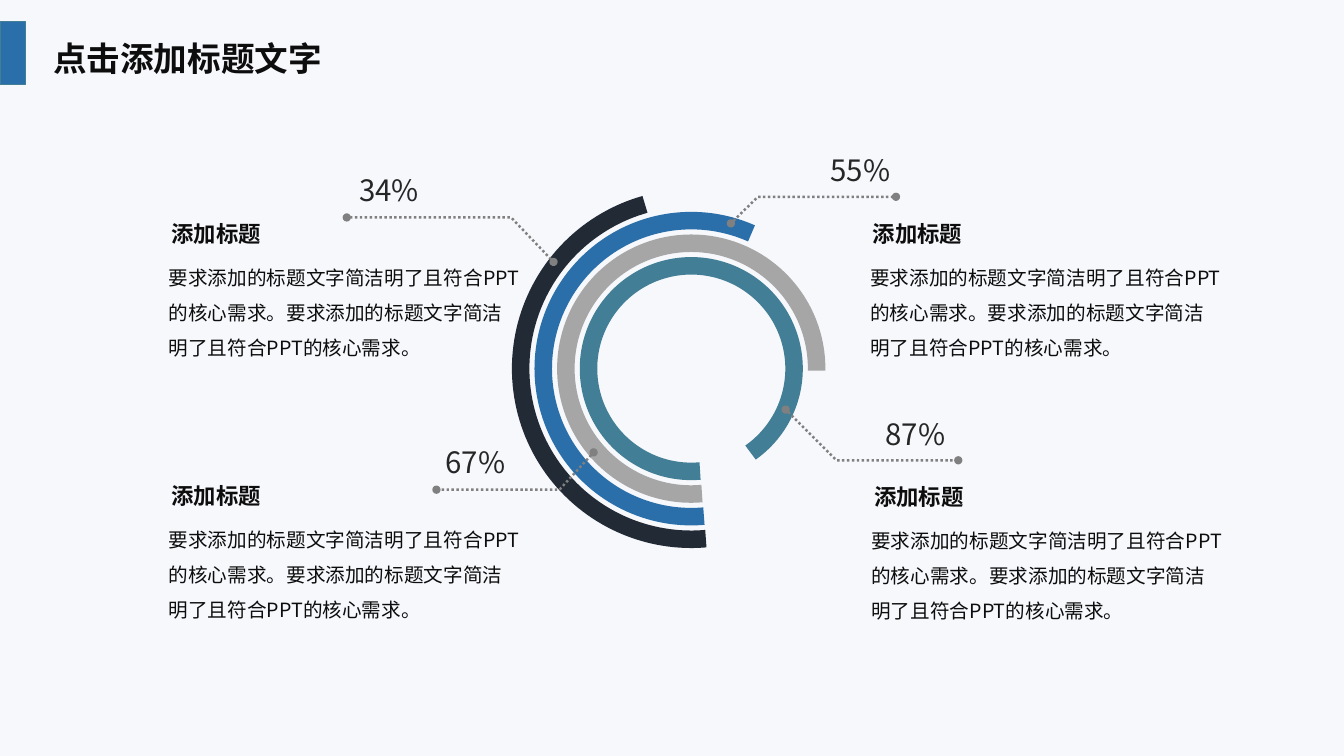
from lxml.etree import SubElement
from pptx import Presentation
from pptx.dml.color import RGBColor
from pptx.enum.dml import MSO_LINE
from pptx.enum.shapes import MSO_SHAPE
from pptx.enum.text import MSO_AUTO_SIZE
from pptx.oxml.ns import qn
from pptx.util import Cm, Pt

FONT = "Noto Sans CJK SC"


def color(value):
    return RGBColor.from_string(value)


def add_text(text, left, top, width, height, size, bold=False, ink="0D0D0D", wrap=True):
    frame = slide.shapes.add_textbox(Cm(left), Cm(top), Cm(width), Cm(height)).text_frame
    frame.word_wrap = wrap
    frame.auto_size = MSO_AUTO_SIZE.SHAPE_TO_FIT_TEXT
    paragraph = frame.paragraphs[0]
    paragraph.text = text
    paragraph.font.size = Pt(size)
    paragraph.font.bold = bold
    paragraph.font.color.rgb = color(ink)
    paragraph.font.name = FONT
    SubElement(paragraph._p.pPr.find(qn("a:defRPr")), qn("a:ea"), typeface=FONT)
    return frame


deck = Presentation()
deck.slide_width, deck.slide_height = Cm(33.87), Cm(19.05)
slide = deck.slides.add_slide(deck.slide_layouts[6])
slide.background.fill.solid()
slide.background.fill.fore_color.rgb = color("F6F8FC")

center_x, center_y = 17.42, 9.29
rings = [("427E96", 324.78), ("A6A6A6", 270.9), ("2A6FAA", 204.01), ("222A35", 164.26)]
for index, (ring_color, end_angle) in enumerate(rings):
    diameter = 5.18 + 1.14 * index
    ring = slide.shapes.add_shape(
        MSO_SHAPE.ARC, Cm(center_x - diameter / 2), Cm(center_y - diameter / 2),
        Cm(diameter), Cm(diameter))
    ring.rotation = 90
    ring.adjustments[0] = 355.1 * 0.6
    ring.adjustments[1] = end_angle * 0.6
    ring.shadow.inherit = False
    ring.fill.background()
    ring.line.color.rgb = color(ring_color)
    ring.line.width = Pt(12.5)

callouts = [
    ("34%", (8.8, 4.2), [(13.95, 6.6), (12.88, 5.48), (8.74, 5.48)]),
    ("55%", (20.68, 3.71), [(18.42, 5.63), (19.1, 4.96), (22.58, 4.96)]),
    ("67%", (10.98, 11.06), [(14.96, 11.4), (14.1, 12.34), (11, 12.34)]),
    ("87%", (22.07, 10.35), [(19.8, 10.32), (21.08, 11.6), (24.15, 11.6)]),
]
for percent, (left, top), points in callouts:
    start, *bends = [(Cm(x), Cm(y)) for x, y in points]
    builder = slide.shapes.build_freeform(*start)
    builder.add_line_segments(bends, close=False)
    leader = builder.convert_to_shape()
    leader.shadow.inherit = False
    leader.fill.background()
    leader.line.color.rgb = color("808080")
    leader.line.width = Pt(1.75)
    leader.line.dash_style = MSO_LINE.ROUND_DOT
    for end in ("a:headEnd", "a:tailEnd"):
        SubElement(leader.line._ln, qn(end), type="oval")
    add_text(percent, left, top, 2.11, 1.35, 21, ink="262626", wrap=False)

sentence = "要求添加的标题文字简洁明了且符合PPT的核心需求。"
for left, top in [(21.78, 12.05), (21.75, 5.42), (4.07, 12.02), (4.07, 5.42)]:
    add_text("添加标题", left, top, 4.04, 0.94, 16, bold=True)
    body = add_text(sentence * 2, left, top + 0.88, 9.2, 2.77, 14)
    body.margin_left = body.margin_right = Cm(0.18)
    body.margin_top = body.margin_bottom = Cm(0.1)
    body.paragraphs[0].line_spacing = 1.5

title_bar = slide.shapes.add_shape(MSO_SHAPE.RECTANGLE, Cm(0), Cm(0.55), Cm(0.64), Cm(1.58))
title_bar.shadow.inherit = False
title_bar.fill.solid()
title_bar.fill.fore_color.rgb = color("2A6FAA")
title_bar.line.color.rgb = color("427E96")
title_bar.line.width = Pt(1)
add_text("点击添加标题文字", 1.09, 0.84, 10.19, 1.27, 24, bold=True)

deck.save("out.pptx")
